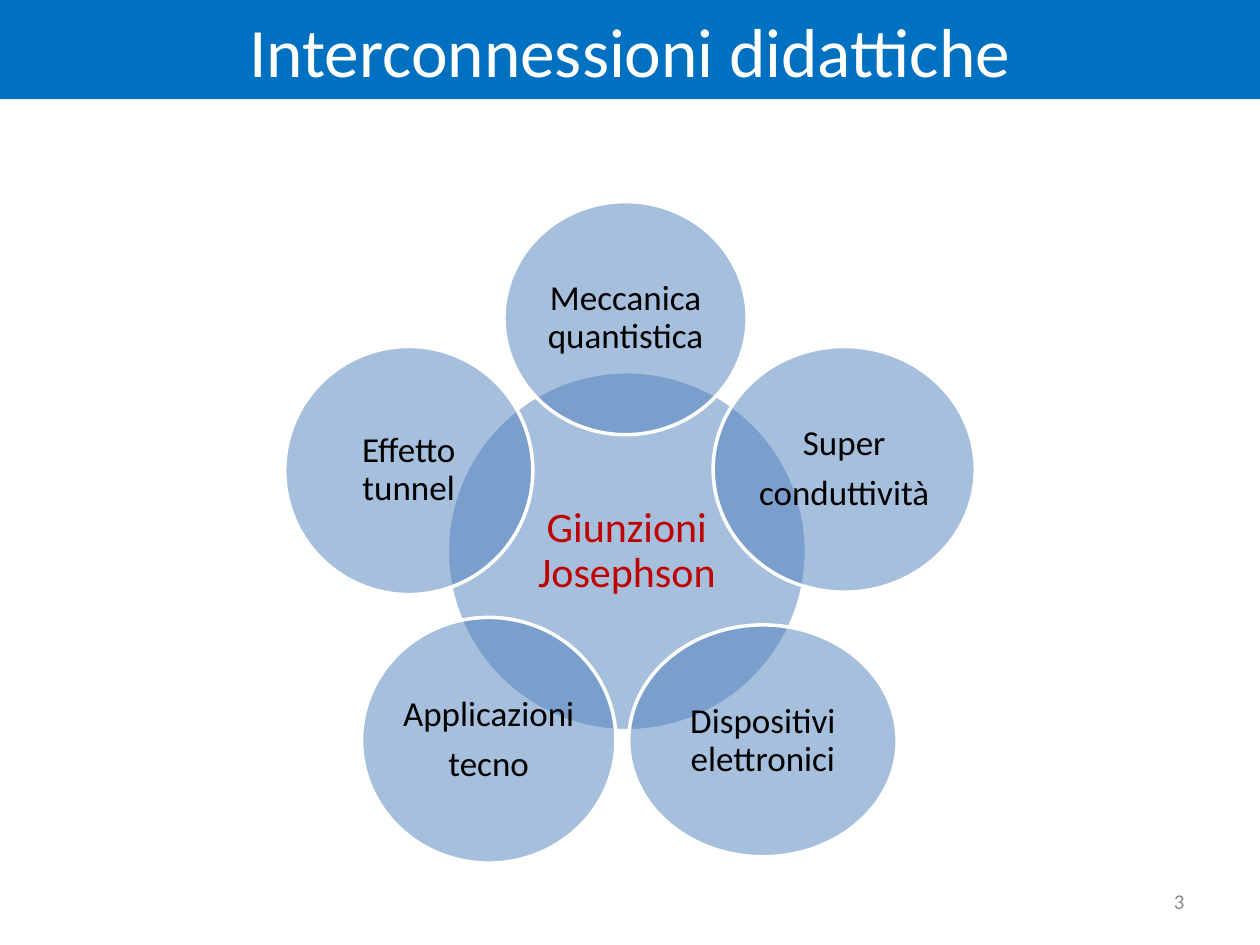
from lxml import etree
from pptx import Presentation
from pptx.dml.color import RGBColor
from pptx.enum import shapes, text
from pptx.oxml.ns import qn
from pptx.util import Pt

BLUE = RGBColor(0x00, 0x70, 0xC0)
PETAL = RGBColor(0x4F, 0x81, 0xBD)
WHITE = RGBColor(0xFF, 0xFF, 0xFF)
BLACK = RGBColor(0x00, 0x00, 0x00)
RED = RGBColor(0xC0, 0x00, 0x00)
GREY = RGBColor(0x8C, 0x8C, 0x8C)
FONT = "Calibri"

HUB = ((255.6, 212.4, 205.2, 205.2), ["Giunzioni Josephson"])
PETALS = [
    ((288, 115.2, 139, 133.2), ["Meccanica quantistica"]),
    ((407.5, 198, 149.8, 140.4), ["Super", "conduttività"]),
    ((359.3, 357.1, 153.4, 132.5), ["Dispositivi elettronici"]),
    ((206.6, 352.8, 145.4, 140.4), ["Applicazioni", "tecno"]),
    ((162.7, 198, 141.8, 141.8), ["Effetto tunnel"]),
]


def write(tf, lines, size, color, align):
    tf.word_wrap = True
    tf.vertical_anchor = text.MSO_ANCHOR.MIDDLE
    for i, line in enumerate(lines):
        p = tf.paragraphs[0] if i == 0 else tf.add_paragraph()
        p.alignment = align
        r = p.add_run()
        r.text = line
        r.font.size = Pt(size)
        r.font.name = FONT
        r.font.color.rgb = color


def add_title(s, box, title):
    sp = s.shapes.add_shape(shapes.MSO_SHAPE.RECTANGLE, *map(Pt, box))
    sp.shadow.inherit = False
    sp.fill.solid()
    sp.fill.fore_color.rgb = BLUE
    sp.line.fill.background()
    write(sp.text_frame, [title], 39.6, WHITE, text.PP_ALIGN.CENTER)


def add_circle(group, box, lines, size, color):
    """Add a half-transparent ellipse with its label inside."""
    sp = group.shapes.add_shape(shapes.MSO_SHAPE.OVAL, *map(Pt, box))
    sp.shadow.inherit = False
    sp.fill.solid()
    sp.fill.fore_color.rgb = PETAL
    rgb = sp.fill._xPr.find(qn("a:solidFill")).find(qn("a:srgbClr"))
    etree.SubElement(rgb, qn("a:alpha"), val="50000")
    sp.line.color.rgb = WHITE
    sp.line.width = Pt(2)
    tf = sp.text_frame
    tf.margin_left = tf.margin_right = tf.margin_top = tf.margin_bottom = Pt(2)
    write(tf, lines, size, color, text.PP_ALIGN.CENTER)
    for p in tf.paragraphs:
        p.line_spacing = 0.9
        p.space_after = Pt(0.35 * size)


def add_radial_venn(s):
    group = s.shapes.add_group_shape()
    add_circle(group, *HUB, 24, RED)
    for box, lines in PETALS:
        add_circle(group, box, lines, 20, BLACK)


def add_page_number(s, box, number):
    sp = s.shapes.add_textbox(*map(Pt, box))
    write(sp.text_frame, [number], 12, GREY, text.PP_ALIGN.RIGHT)


def main():
    prs = Presentation()
    prs.slide_width, prs.slide_height = Pt(720), Pt(540)
    s = prs.slides.add_slide(prs.slide_layouts[6])
    add_title(s, (0, 0, 720, 56.7), "Interconnessioni didattiche")
    add_radial_venn(s)
    add_page_number(s, (516, 500.5, 168, 28.75), "3")
    prs.save("out.pptx")


if __name__ == "__main__":
    main()
